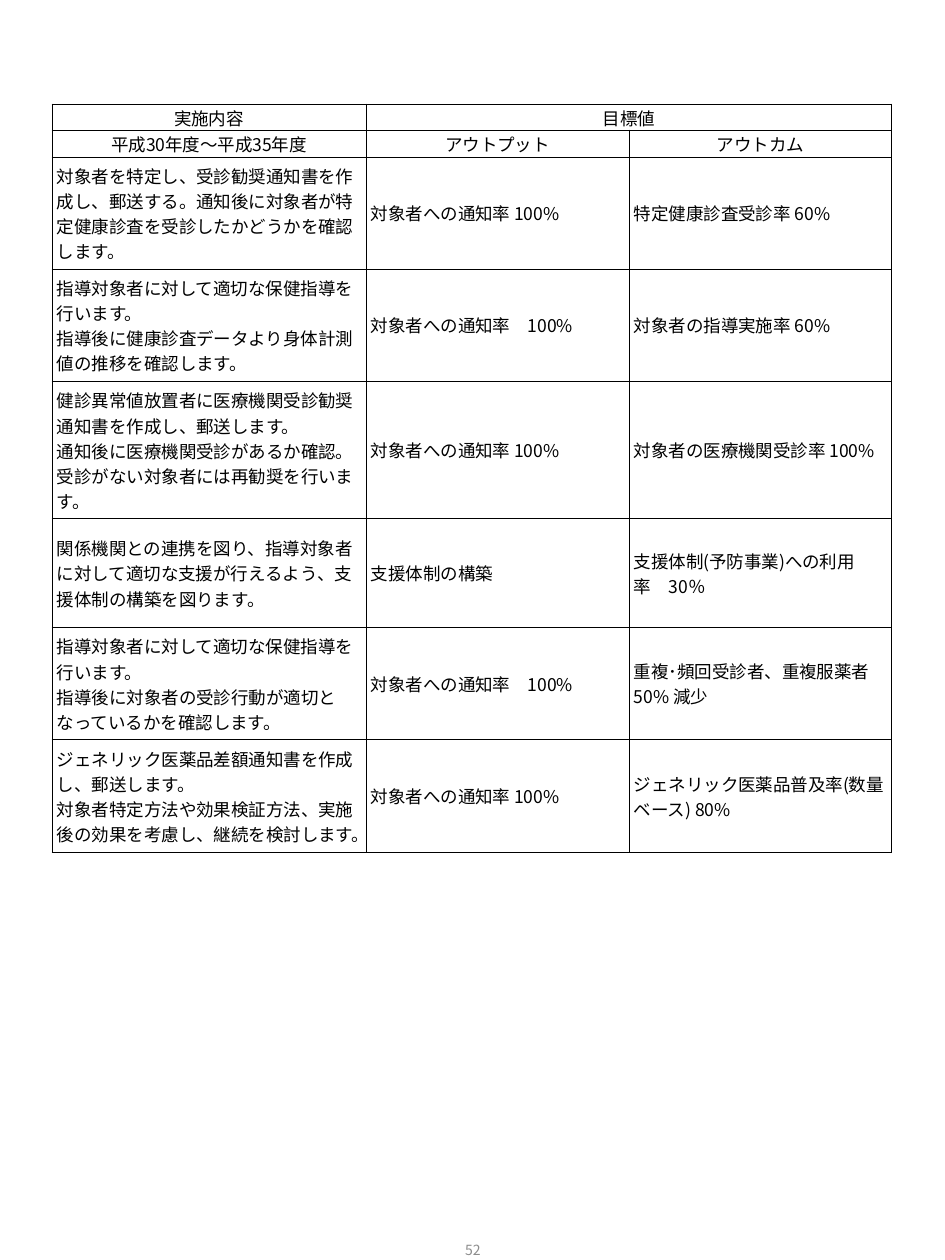
from lxml import etree
from pptx import Presentation
from pptx.dml.color import RGBColor
from pptx.enum import text
from pptx.oxml.ns import qn
from pptx.util import Pt

PX = 914400 // 126
FONT = "Noto Sans CJK JP"
HUES = {"ink": "000000", "page": "8C8C8C"}
WIDTHS = [314, 263, 263]
HEIGHTS = [26, 27, 112, 113, 137, 109, 112, 113]
ROWS = [
    ["実施内容", "目標値", ""],
    ["平成30年度～平成35年度", "アウトプット", "アウトカム"],
    ["対象者を特定し、受診勧奨通知書を作成し、郵送する。通知後に対象者が特定健康診査を受診したかどうかを確認します。",
     "対象者への通知率 100%", "特定健康診査受診率 60%"],
    ["指導対象者に対して適切な保健指導を行います。\n指導後に健康診査データより身体計測値の推移を確認します。",
     "対象者への通知率　100%", "対象者の指導実施率 60%"],
    ["健診異常値放置者に医療機関受診勧奨通知書を作成し、郵送します。\n"
     "通知後に医療機関受診があるか確認。受診がない対象者には再勧奨を行います。",
     "対象者への通知率 100%", "対象者の医療機関受診率 100%"],
    ["関係機関との連携を図り、指導対象者に対して適切な支援が行えるよう、支援体制の構築を図ります。",
     "支援体制の構築", "支援体制(予防事業)への利用率　30％"],
    ["指導対象者に対して適切な保健指導を行います。\n指導後に対象者の受診行動が適切となっているかを確認します。",
     "対象者への通知率　100%", "重複･頻回受診者、重複服薬者\n50% 減少"],
    ["ジェネリック医薬品差額通知書を作成し、郵送します。\n対象者特定方法や効果検証方法、実施後の効果を考慮し、継続を検討します。",
     "対象者への通知率 100%", "ジェネリック医薬品普及率(数量ベース) 80%"],
]


def write(frame, words, size, hue, align):
    """Fill a text frame, one paragraph a line, with Latin and East Asian fonts."""
    frame.text = words
    for para in frame.paragraphs:
        para.alignment = align
        for run in para.runs:
            run.font.size = Pt(size)
            run.font.name = FONT
            run.font.color.rgb = RGBColor.from_string(HUES[hue])
            latin = run._r.get_or_add_rPr().find(qn("a:latin"))
            latin.addnext(etree.Element(qn("a:ea"), typeface=FONT))


def border(cell):
    """Rule all four sides of a cell."""
    props = cell._tc.get_or_add_tcPr()
    for spot, side in enumerate(["a:lnL", "a:lnR", "a:lnT", "a:lnB"]):
        line = etree.Element(qn(side), w=str(int(Pt(0.5))))
        fill = etree.SubElement(line, qn("a:solidFill"))
        etree.SubElement(fill, qn("a:srgbClr"), val=HUES["ink"])
        props.insert(spot, line)


deck = Presentation()
deck.slide_width, deck.slide_height = 945 * PX, 1260 * PX
slide = deck.slides.add_slide(deck.slide_layouts[6])

page = slide.shapes.add_textbox(363 * PX, 1216 * PX, 220 * PX, 67 * PX).text_frame
page.word_wrap = True
page.vertical_anchor = text.MSO_ANCHOR.MIDDLE
write(page, "52", 8, "page", text.PP_ALIGN.CENTER)

grid = slide.shapes.add_table(
    len(ROWS), len(WIDTHS), 52 * PX, 104 * PX, sum(WIDTHS) * PX, sum(HEIGHTS) * PX).table
grid.first_row = grid.horz_banding = False
for col, width in zip(grid.columns, WIDTHS):
    col.width = width * PX
for row, height in zip(grid.rows, HEIGHTS):
    row.height = height * PX

for r, line in enumerate(ROWS):
    head = r < 2
    look = {
        "vertical_anchor": text.MSO_ANCHOR.MIDDLE,
        "margin_left": 5 * PX, "margin_right": 5 * PX,
        "margin_top": (1 if head else 6) * PX,
        "margin_bottom": (0 if head else 6) * PX,
    }
    align = text.PP_ALIGN.CENTER if head else text.PP_ALIGN.LEFT
    for c, words in enumerate(line):
        cell = grid.cell(r, c)
        for key, value in look.items():
            setattr(cell, key, value)
        cell.fill.background()
        border(cell)
        write(cell.text_frame, words, 10, "ink", align)
grid.cell(0, 1).merge(grid.cell(0, 2))

deck.save("out.pptx")
